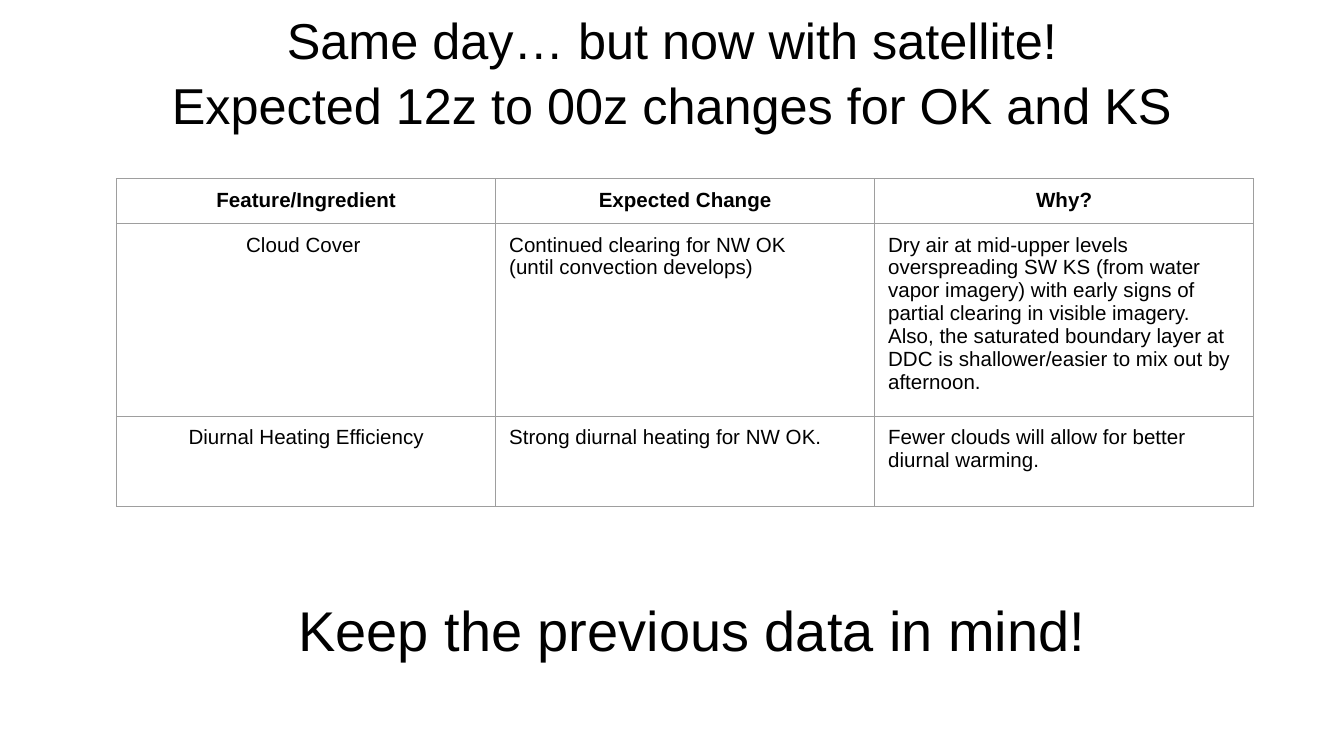
"""Build the slide of expected weather changes with satellite data."""
from dataclasses import dataclass

from lxml.etree import SubElement
from pptx import Presentation
from pptx.dml.color import RGBColor
from pptx.enum.text import MSO_ANCHOR, PP_ALIGN
from pptx.oxml.ns import qn
from pptx.slide import Slide
from pptx.table import _Cell
from pptx.text.text import TextFrame
from pptx.util import Pt


@dataclass(frozen=True)
class Theme:
    font: str = "Arial"
    text: str = "000000"
    border: str = "9E9E9E"
    border_width: float = 0.75
    title_size: float = 27
    closing_size: float = 30
    table_size: float = 11


@dataclass(frozen=True)
class Heading:
    lines: tuple[str, ...]
    left: float
    top: float
    width: float
    height: float
    size: float
    spacing: float = 1.0


@dataclass(frozen=True)
class Row:
    height: float
    cells: tuple[tuple[str, ...], ...]


THEME = Theme()
HEADINGS = (
    Heading(("Same day… but now with satellite!",
             "Expected 12z to 00z changes for OK and KS"),
            36, 12.2, 648, 50.4, THEME.title_size, 1.08),
    Heading(("Keep the previous data in mind!",),
            46.8, 303.1, 648, 67.7, THEME.closing_size),
)
ROWS = (
    Row(23.3, (("Feature/Ingredient",), ("Expected Change",), ("Why?",))),
    Row(96.5, (
        ("Cloud Cover ",),
        ("Continued clearing for NW OK", "(until convection develops)"),
        ("Dry air at mid-upper levels overspreading SW KS (from water vapor "
         "imagery) with early signs of partial clearing in visible imagery. "
         "Also, the saturated boundary layer at DDC is shallower/easier to "
         "mix out by afternoon.",))),
    Row(48.2, (
        ("Diurnal Heating Efficiency",),
        ("Strong diurnal heating for NW OK.",),
        ("Fewer clouds will allow for better diurnal warming.",))),
)
TABLE_LEFT, TABLE_TOP, COLUMN_WIDTH = 62.6, 95.7, 203


def write(tf: TextFrame, lines: tuple[str, ...], size: float,
          align: PP_ALIGN, bold: bool = False, spacing: float = 1.0) -> None:
    """Write one paragraph per line."""
    tf.word_wrap = True
    for i, line in enumerate(lines):
        p = tf.add_paragraph() if i else tf.paragraphs[0]
        p.alignment = align
        p.line_spacing = spacing
        r = p.add_run()
        r.text = line
        r.font.name = THEME.font
        r.font.size = Pt(size)
        r.font.bold = bold
        r.font.color.rgb = RGBColor.from_string(THEME.text)


def add_heading(s: Slide, heading: Heading) -> None:
    """Add a centred heading."""
    sp = s.shapes.add_textbox(Pt(heading.left), Pt(heading.top),
                              Pt(heading.width), Pt(heading.height))
    sp.text_frame.vertical_anchor = MSO_ANCHOR.MIDDLE
    write(sp.text_frame, heading.lines, heading.size, PP_ALIGN.CENTER,
          spacing=heading.spacing)


def style_cell(cell: _Cell) -> None:
    """Give a cell its margins, thin borders and no fill."""
    cell.margin_left = cell.margin_right = Pt(7.2)
    cell.margin_top = cell.margin_bottom = Pt(5.4)
    tc_pr = cell._tc.get_or_add_tcPr()
    for side in ("a:lnL", "a:lnR", "a:lnT", "a:lnB"):
        ln = SubElement(tc_pr, qn(side), w=str(Pt(THEME.border_width)))
        fill = SubElement(ln, qn("a:solidFill"))
        SubElement(fill, qn("a:srgbClr"), val=THEME.border)
    cell.fill.background()


def add_changes_table(s: Slide, rows: tuple[Row, ...]) -> None:
    """Add the table with a bold header and a centred first column."""
    columns = len(rows[0].cells)
    table = s.shapes.add_table(
        len(rows), columns, Pt(TABLE_LEFT), Pt(TABLE_TOP),
        Pt(columns * COLUMN_WIDTH), Pt(sum(row.height for row in rows))).table
    table.first_row = table.horz_banding = False
    for column in table.columns:
        column.width = Pt(COLUMN_WIDTH)
    for i, row in enumerate(rows):
        table.rows[i].height = Pt(row.height)
        for j, lines in enumerate(row.cells):
            cell = table.cell(i, j)
            style_cell(cell)
            header = i == 0
            align = PP_ALIGN.CENTER if header or j == 0 else PP_ALIGN.LEFT
            write(cell.text_frame, lines, THEME.table_size, align, header)


def main() -> None:
    """Build and save the slide."""
    prs = Presentation()
    prs.slide_width, prs.slide_height = Pt(720), Pt(405)
    s = prs.slides.add_slide(prs.slide_layouts[6])
    title, closing = HEADINGS
    add_heading(s, title)
    add_changes_table(s, ROWS)
    add_heading(s, closing)
    prs.save("out.pptx")


if __name__ == "__main__":
    main()
